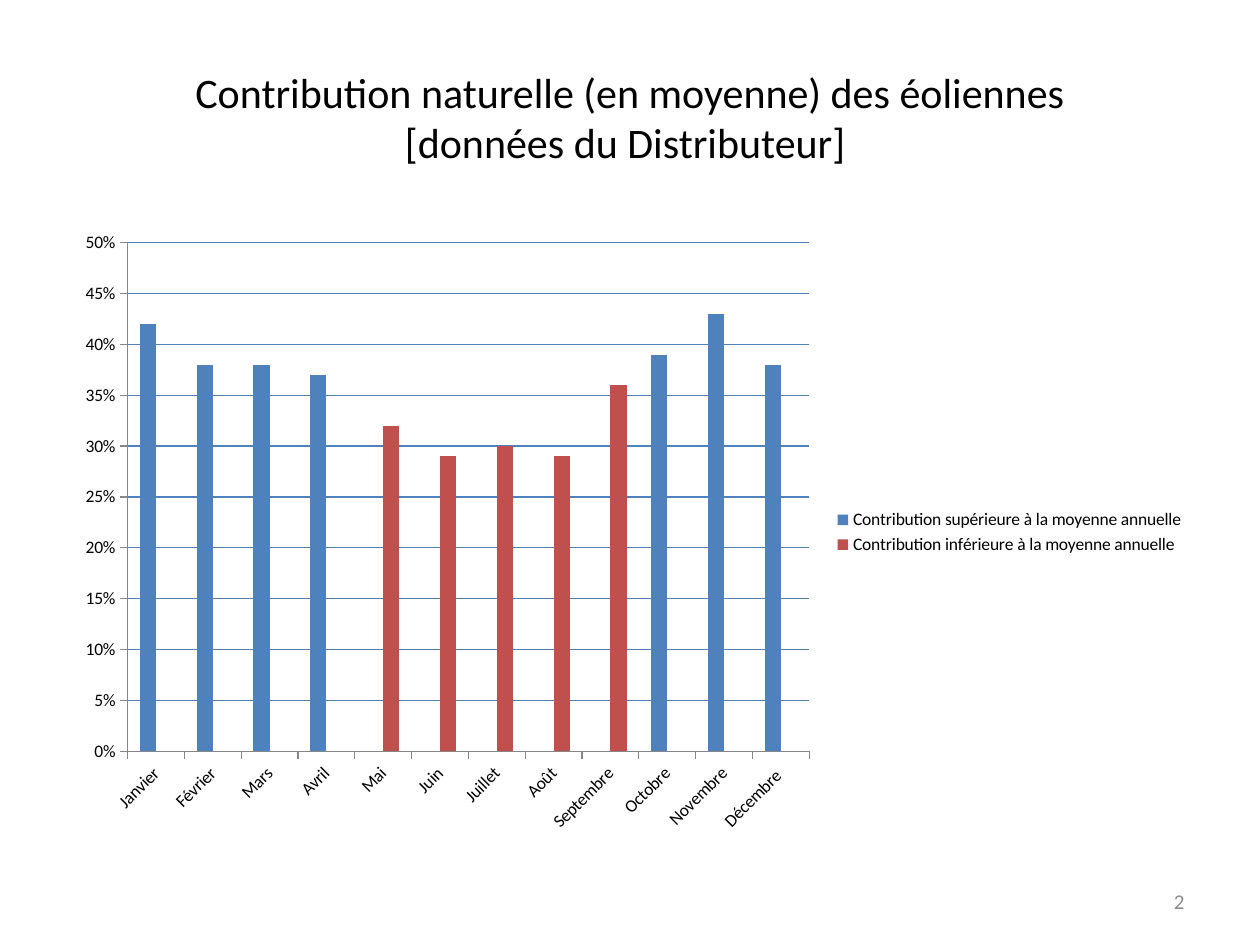
from pptx import Presentation
from pptx.chart.data import CategoryChartData
from pptx.dml.color import RGBColor
from pptx.enum.chart import XL_CHART_TYPE, XL_LEGEND_POSITION, XL_TICK_MARK
from pptx.enum.text import MSO_ANCHOR, PP_ALIGN
from pptx.util import Inches, Pt

COLUMNS = XL_CHART_TYPE.COLUMN_CLUSTERED
LEGEND_RIGHT = XL_LEGEND_POSITION.RIGHT
TICK_OUT = XL_TICK_MARK.OUTSIDE
MIDDLE = MSO_ANCHOR.MIDDLE
CENTER, RIGHT = PP_ALIGN.CENTER, PP_ALIGN.RIGHT

FONT = "Calibri"
COLORS = {"text": "000000", "number": "8C8C8C", "axis": "868686",
          "above": "4F81BD", "below": "C0504D"}

MONTHS = ["Janvier", "Février", "Mars", "Avril", "Mai", "Juin", "Juillet",
          "Août", "Septembre", "Octobre", "Novembre", "Décembre "]
SERIES = [
    ("Contribution supérieure à la moyenne annuelle", "above",
     [0.42, 0.38, 0.38, 0.37] + [None] * 5 + [0.39, 0.43, 0.38]),
    ("Contribution inférieure à la moyenne annuelle", "below",
     [None] * 4 + [0.32, 0.29, 0.3, 0.29, 0.36] + [None] * 3),
]


class SlideBuilder:
    def __init__(self, prs):
        self.s = prs.slides.add_slide(prs.slide_layouts[6])

    def style(self, font, size, color):
        font.name = FONT
        font.size = Pt(size)
        font.color.rgb = RGBColor.from_string(COLORS[color])

    def line(self, line, color):
        line.color.rgb = RGBColor.from_string(COLORS[color])
        line.width = Pt(0.75)

    def text(self, text, box, size, color, align):
        tf = self.s.shapes.add_textbox(*map(Inches, box)).text_frame
        tf.word_wrap = True
        tf.vertical_anchor = MIDDLE
        p = tf.paragraphs[0]
        p.text = text
        p.alignment = align
        self.style(p.font, size, color)

    def column_chart(self, categories, series, box):
        data = CategoryChartData(number_format="0%")
        data.categories = categories
        for name, _, values in series:
            data.add_series(name, values)
        chart = self.s.shapes.add_chart(COLUMNS, *map(Inches, box), data).chart
        self.style(chart.font, 10, "text")
        chart.has_title = False

        # Columns
        plot = chart.plots[0]
        plot.gap_width = 150
        plot.vary_by_categories = False
        for ser, (_, color, _) in zip(plot.series, series):
            ser.format.fill.solid()
            ser.format.fill.fore_color.rgb = RGBColor.from_string(COLORS[color])
            ser.invert_if_negative = False

        # Axes and gridlines
        for axis in (chart.category_axis, chart.value_axis):
            axis.major_tick_mark = TICK_OUT
            self.line(axis.format.line, "axis")
        axis = chart.value_axis
        axis.minimum_scale, axis.maximum_scale, axis.major_unit = 0, 0.5, 0.05
        axis.tick_labels.number_format = "0%"
        axis.tick_labels.number_format_is_linked = False
        axis.has_major_gridlines = True
        self.line(axis.major_gridlines.format.line, "above")

        # Legend
        chart.has_legend = True
        chart.legend.position = LEGEND_RIGHT
        chart.legend.include_in_layout = False


def main():
    prs = Presentation()
    prs.slide_width, prs.slide_height = Inches(10), Inches(7.5)
    slide = SlideBuilder(prs)

    # Title
    slide.text("Contribution naturelle (en moyenne) des éoliennes\v"
               "[données du Distributeur] ",
               (0.5, 0.3, 9, 1.25), 24, "text", CENTER)
    # Monthly contribution
    slide.column_chart(MONTHS, SERIES, (0.5, 1.75, 9, 4.95))
    # Slide number
    slide.text("2", (7.17, 6.95, 2.33, 0.4), 12, "number", RIGHT)

    prs.save("out.pptx")


if __name__ == "__main__":
    main()
